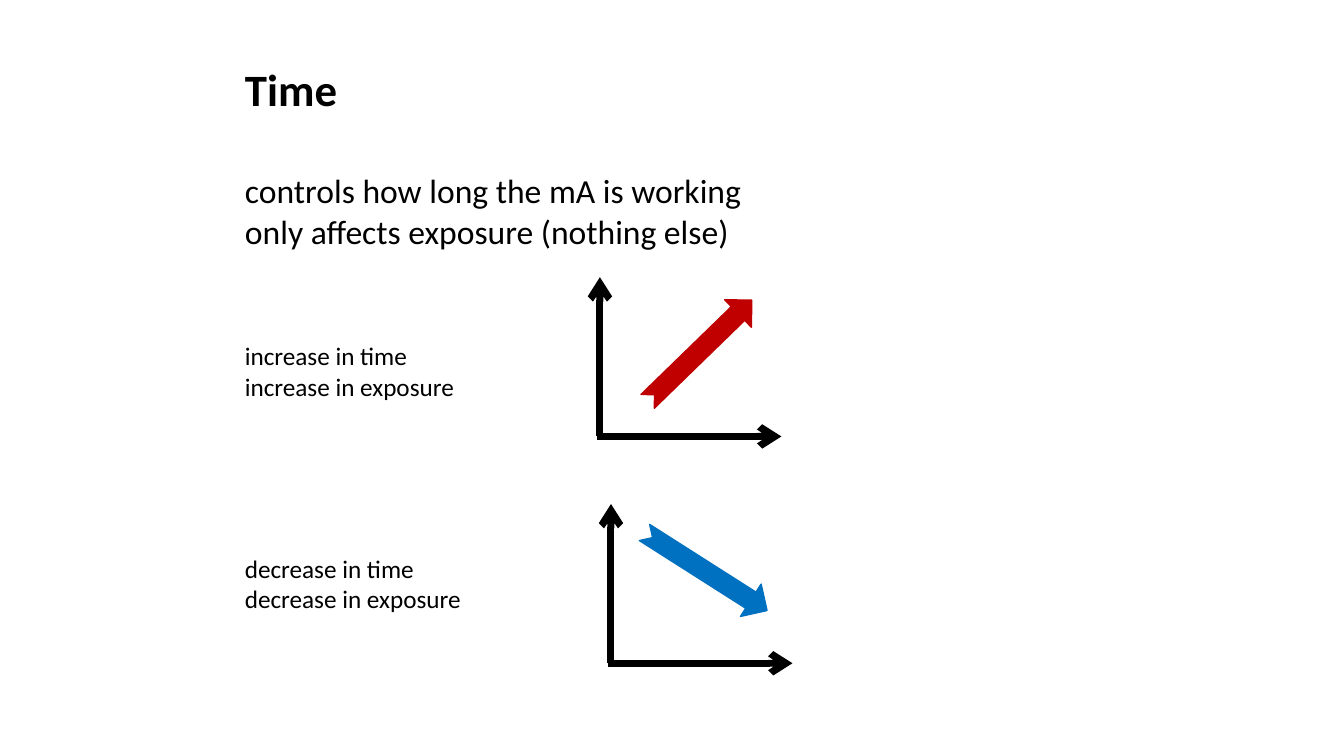
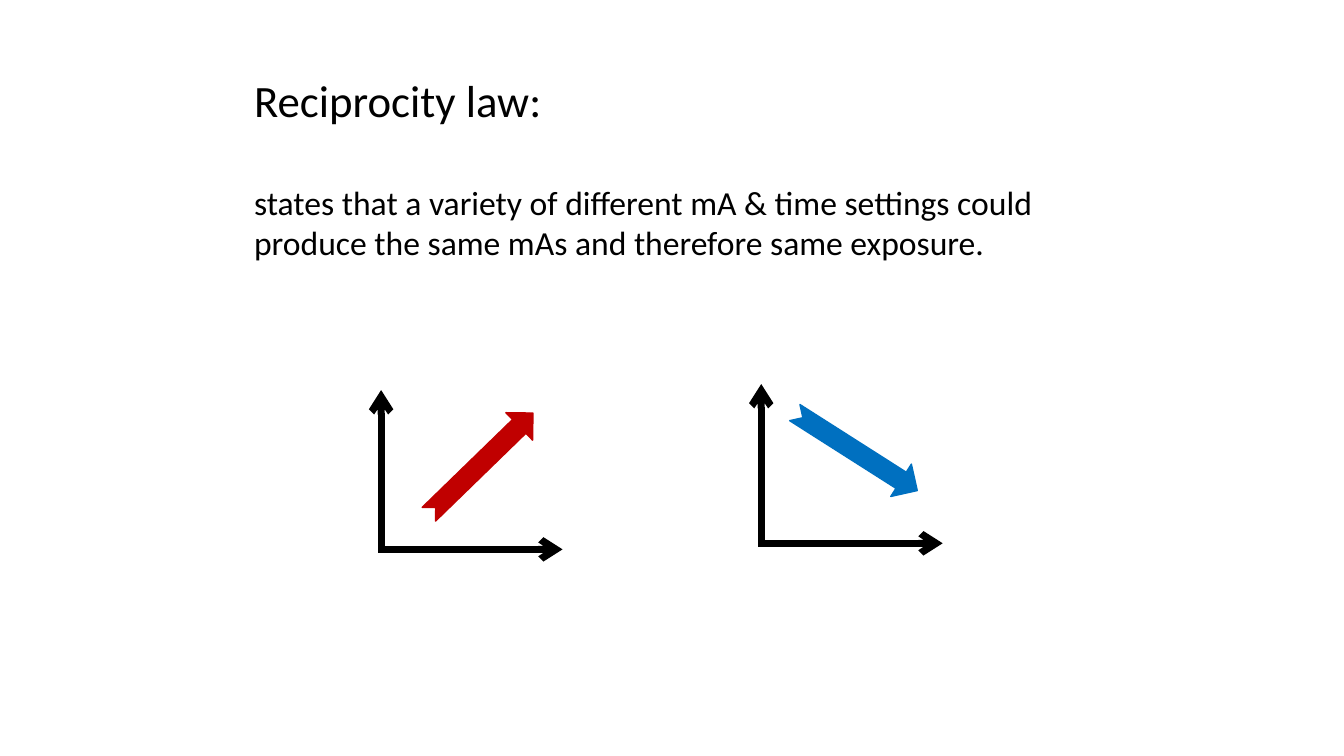
from dataclasses import dataclass

from pptx import Presentation
from pptx.dml.color import RGBColor
from pptx.enum.shapes import MSO_CONNECTOR as Connector, MSO_SHAPE as Shape
from pptx.enum.text import MSO_ANCHOR as Anchor, MSO_AUTO_SIZE as AutoSize, PP_ALIGN as Align
from pptx.oxml.ns import qn
from pptx.oxml.xmlchemy import OxmlElement
from pptx.util import Inches, Pt

COLORS = {"ink": "000000", "rise": "C00000", "fall": "0070C0"}
FONT = "Calibri"
TITLE_AND_CONTENT = 1

# Graph geometry, measured from the crossing of the axes
AXIS_HEIGHT, AXIS_WIDTH, AXIS_OVERLAP = 1.58, 1.80, 0.03
ARROW_WIDTH, ARROW_HEIGHT = 1.44, 0.38

# Heading geometry
TITLE_HEIGHT, BODY_OFFSET, BODY_HEIGHT = 0.64, 1.08, 0.91


@dataclass(frozen=True)
class Trend:
    color: str
    rotation: float
    left: float
    top: float


@dataclass(frozen=True)
class Graph:
    trend: Trend
    x: float
    y: float


@dataclass(frozen=True)
class Caption:
    lines: tuple[str, ...]
    top: float


@dataclass(frozen=True)
class Topic:
    title: str
    bold: bool
    body: tuple[str, ...]
    left: float
    top: float
    width: float
    graphs: tuple[Graph, ...]
    captions: tuple[Caption, ...] = ()


RISING = Trend("rise", 315.8, 0.27, -1.04)
FALLING = Trend("fall", 32.5, 0.22, -1.10)

TOPICS = (
    Topic(
        "Time", True,
        ("controls how long the mA is working", "only affects exposure (nothing else)"),
        2.33, 0.56, 7.92,
        (Graph(RISING, 5.95, 4.33), Graph(FALLING, 6.06, 6.58)),
        (Caption(("increase in time", "increase in exposure"), 3.33),
         Caption(("decrease in time", "decrease in exposure"), 5.44)),
    ),
    Topic(
        "Reciprocity law:", False,
        ("states that a variety of different mA & time settings could "
         "produce the same mAs and therefore same exposure.",),
        2.42, 0.67, 8.33,
        (Graph(RISING, 3.78, 5.45), Graph(FALLING, 7.55, 5.39)),
    ),
)


def rgb(name: str) -> RGBColor:
    return RGBColor.from_string(COLORS[name])


def write_text(shape, lines: tuple[str, ...], *, size: float,
               bold: bool = False, color: str = "ink") -> None:
    """Fill a shape with plain, left-aligned paragraphs without bullets."""
    frame = shape.text_frame
    frame.word_wrap = True
    frame.auto_size = AutoSize.NONE
    frame.vertical_anchor = Anchor.TOP
    for index, line in enumerate(lines):
        paragraph = frame.add_paragraph() if index else frame.paragraphs[0]
        paragraph.alignment = Align.LEFT
        paragraph.space_before = Pt(0)
        properties = paragraph._p.get_or_add_pPr()
        properties.set("marL", "0")
        properties.set("indent", "0")
        properties.append(OxmlElement("a:buNone"))
        run = paragraph.add_run()
        run.text = line
        run.font.name, run.font.size, run.font.bold = FONT, Pt(size), bold
        run.font.color.rgb = rgb(color)


def place(shape, left: float, top: float, width: float, height: float) -> None:
    shape.left, shape.top = Inches(left), Inches(top)
    shape.width, shape.height = Inches(width), Inches(height)


def add_axis(shapes, start: tuple[float, float], end: tuple[float, float]) -> None:
    axis = shapes.add_connector(
        Connector.STRAIGHT, *(Inches(value) for value in (*start, *end)))
    axis.line.color.rgb = rgb("ink")
    axis.line.width = Pt(5)
    properties = axis.element.spPr
    arrowhead = OxmlElement("a:tailEnd")
    arrowhead.set("type", "arrow")
    properties.find(qn("a:ln")).append(arrowhead)
    properties.append(OxmlElement("a:effectLst"))


def add_graph(slide, graph: Graph) -> None:
    shapes = slide.shapes.add_group_shape().shapes
    x, y, trend = graph.x, graph.y, graph.trend
    add_axis(shapes, (x, y), (x, y - AXIS_HEIGHT))
    add_axis(shapes, (x - AXIS_OVERLAP, y), (x + AXIS_WIDTH, y))
    arrow = shapes.add_shape(
        Shape.NOTCHED_RIGHT_ARROW, Inches(x + trend.left), Inches(y + trend.top),
        Inches(ARROW_WIDTH), Inches(ARROW_HEIGHT))
    arrow.rotation = trend.rotation
    arrow.shadow.inherit = False
    arrow.fill.solid()
    arrow.fill.fore_color.rgb = rgb(trend.color)
    arrow.line.color.rgb = rgb(trend.color)
    arrow.line.width = Pt(1)


def add_topic(presentation, topic: Topic) -> None:
    slide = presentation.slides.add_slide(presentation.slide_layouts[TITLE_AND_CONTENT])

    # Title and body
    title, body = slide.shapes.title, slide.placeholders[1]
    place(title, topic.left, topic.top, topic.width, TITLE_HEIGHT)
    write_text(title, (topic.title,), size=32, bold=topic.bold)
    place(body, topic.left, topic.top + BODY_OFFSET, topic.width, BODY_HEIGHT)
    write_text(body, topic.body, size=24)

    # Captions beside the graphs
    for caption in topic.captions:
        box = slide.shapes.add_textbox(
            Inches(topic.left), Inches(caption.top), Inches(3), Inches(0.71))
        write_text(box, caption.lines, size=18)

    # Graphs
    for graph in topic.graphs:
        add_graph(slide, graph)


def main() -> None:
    presentation = Presentation()
    presentation.slide_width, presentation.slide_height = Inches(13.33), Inches(7.5)
    for topic in TOPICS:
        add_topic(presentation, topic)
    presentation.save("out.pptx")


if __name__ == "__main__":
    main()
